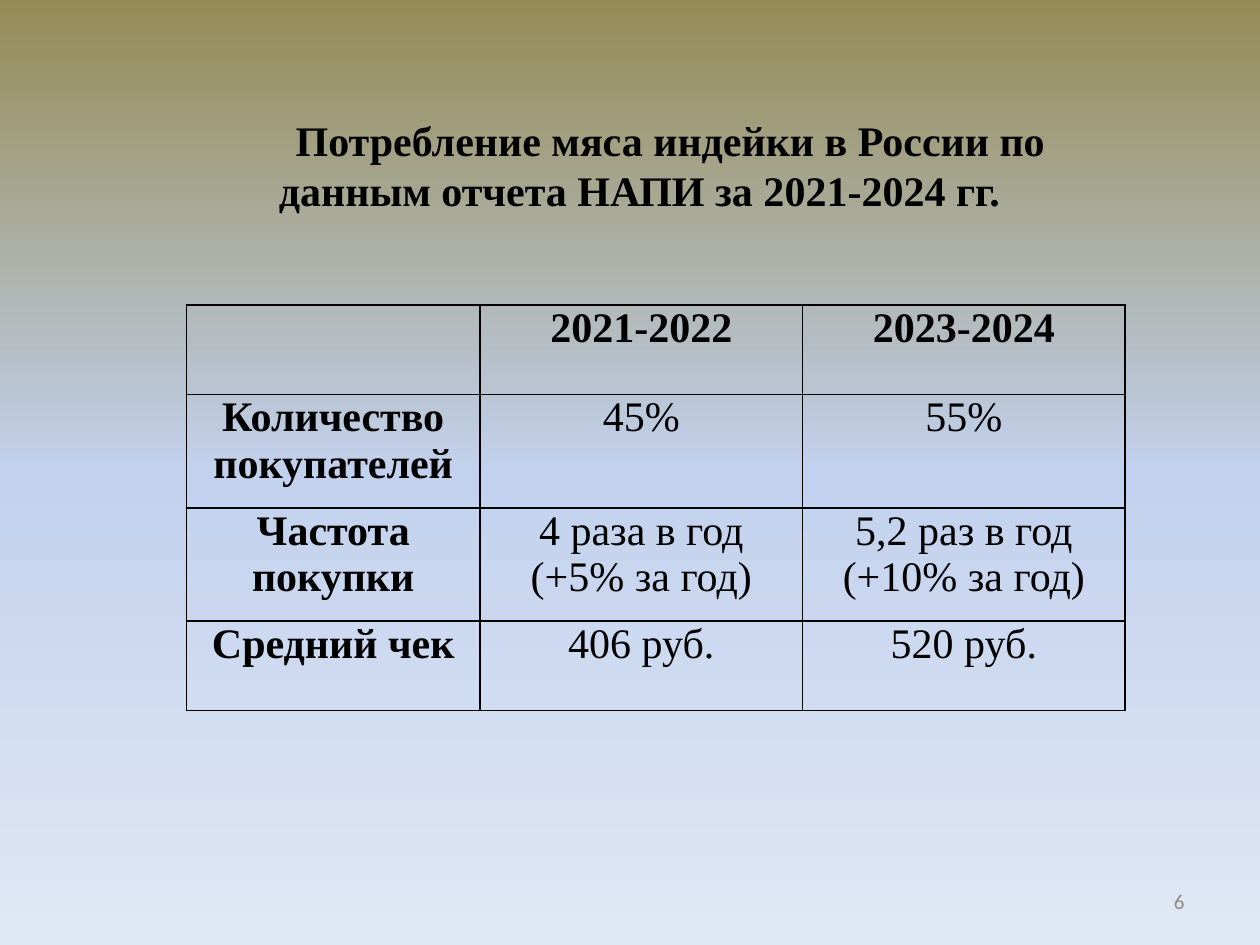
"""Build the slide on turkey meat consumption in Russia."""
import lxml.etree
import pptx
import pptx.dml.color
import pptx.enum.text
import pptx.oxml
import pptx.oxml.ns
import pptx.util

Inches = pptx.util.Inches
Pt = pptx.util.Pt
RGBColor = pptx.dml.color.RGBColor
Align = pptx.enum.text.PP_ALIGN
Anchor = pptx.enum.text.MSO_ANCHOR
qn = pptx.oxml.ns.qn

BLACK = RGBColor(0x00, 0x00, 0x00)
GRAY = RGBColor(0x8C, 0x8C, 0x8C)
OLIVE = RGBColor(0x94, 0x8A, 0x54)
BLUE = RGBColor(0xC2, 0xD1, 0xED)
PALE_BLUE = RGBColor(0xE1, 0xE8, 0xF5)
SERIF = "Times New Roman"

COLUMN_WIDTHS = [2.33, 2.56, 2.56]
ROW_HEIGHTS = [0.71, 0.9, 0.9, 0.71]
ROWS = [
    ["", "2021-2022", "2023-2024"],
    ["Количество покупателей", "45%", "55%"],
    ["Частота покупки", "4 раза в год (+5% за год)", "5,2 раз в год (+10% за год)"],
    ["Средний чек", "406 руб.", "520 руб."],
]


def write(paragraph, text, name, size, color, bold, alignment):
    paragraph.text = text
    paragraph.alignment = alignment
    paragraph.font.name = name
    paragraph.font.size = Pt(size)
    paragraph.font.bold = bold
    paragraph.font.color.rgb = color


def add_borders(cell):
    properties = cell._tc.get_or_add_tcPr()
    for side in ("a:lnL", "a:lnR", "a:lnT", "a:lnB"):
        line = lxml.etree.SubElement(properties, qn(side), w=str(Pt(1)))
        fill = lxml.etree.SubElement(line, qn("a:solidFill"))
        lxml.etree.SubElement(fill, qn("a:srgbClr"), val=str(BLACK))


presentation = pptx.Presentation()
presentation.slide_width = Inches(10)
presentation.slide_height = Inches(7.5)
slide = presentation.slides.add_slide(presentation.slide_layouts[6])

background = slide.background.fill
background.gradient()
background.gradient_angle = 270
stops = background._fill._gradFill.find(qn("a:gsLst"))
for stop in list(stops):
    stops.remove(stop)
for position, color in [(0, OLIVE), (50, BLUE), (100, PALE_BLUE)]:
    stop = lxml.etree.SubElement(stops, qn("a:gs"), pos=str(position * 1000))
    lxml.etree.SubElement(stop, qn("a:srgbClr"), val=str(color))

number = slide.shapes.add_textbox(Inches(7.17), Inches(6.95), Inches(2.33), Inches(0.4))
number.text_frame.word_wrap = True
number.text_frame.vertical_anchor = Anchor.MIDDLE
write(number.text_frame.paragraphs[0], "6", "Calibri", 12, GRAY, False, Align.RIGHT)

title = slide.shapes.add_textbox(Inches(1.48), Inches(0.86), Inches(7.19), Inches(1.25))
title.text_frame.word_wrap = True
title.text_frame.vertical_anchor = Anchor.TOP
heading = title.text_frame.paragraphs[0]
write(heading, "Потребление мяса индейки в России по данным отчета НАПИ за 2021-2024 гг.",
      SERIF, 24, BLACK, True, Align.CENTER)
heading._p.get_or_add_pPr().set("indent", str(Inches(0.49)))

table = slide.shapes.add_table(len(ROWS), len(COLUMN_WIDTHS), Inches(1.48), Inches(2.42),
                               Inches(sum(COLUMN_WIDTHS)), Inches(sum(ROW_HEIGHTS))).table
table.first_row = False
table.horz_banding = False
for column, width in zip(table.columns, COLUMN_WIDTHS):
    column.width = Inches(width)
for row, height in zip(table.rows, ROW_HEIGHTS):
    row.height = Inches(height)

for row_index, texts in enumerate(ROWS):
    for column_index, text in enumerate(texts):
        cell = table.cell(row_index, column_index)
        cell.margin_left = cell.margin_right = Inches(0.07)
        cell.margin_top = cell.margin_bottom = 0
        is_header = row_index == 0 or column_index == 0
        write(cell.text_frame.paragraphs[0], text, SERIF, 24, BLACK, is_header, Align.CENTER)
        add_borders(cell)
        cell.fill.background()

presentation.save("out.pptx")
